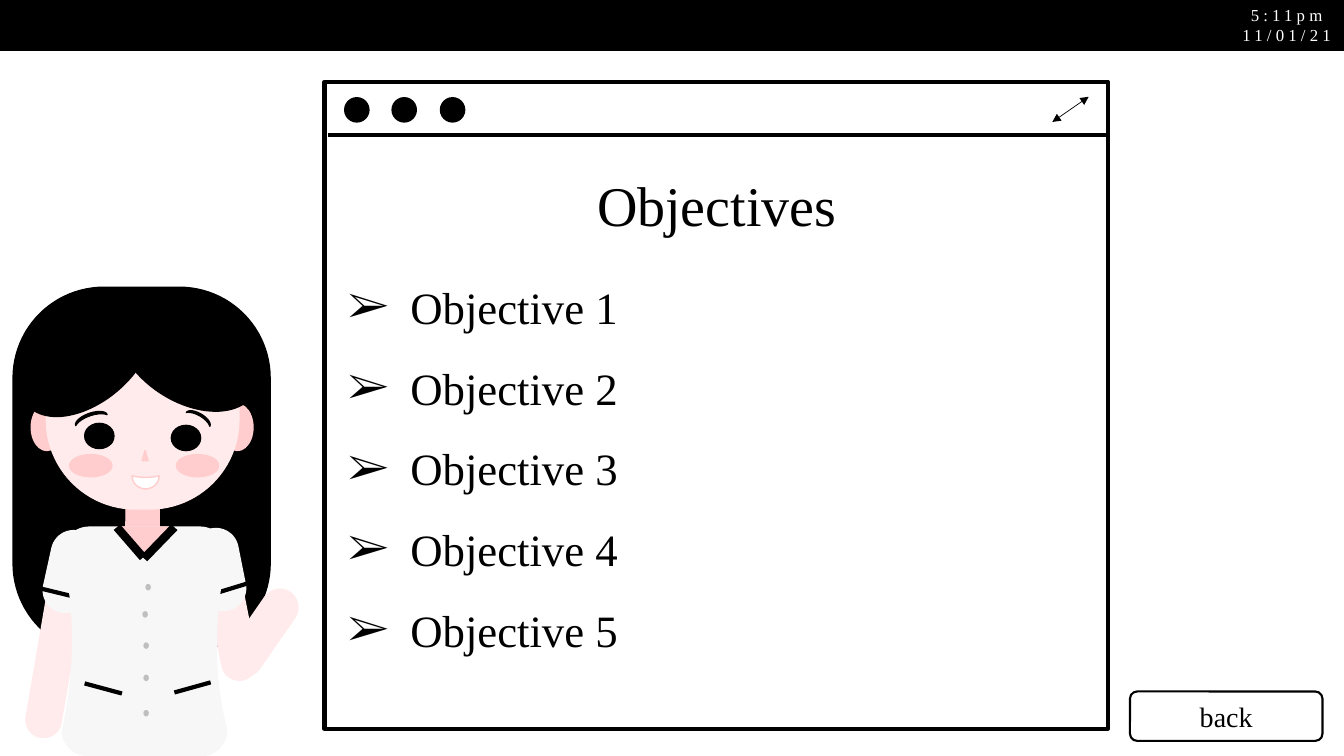
from lxml import etree
from pptx import Presentation
from pptx.dml.color import RGBColor
from pptx.enum import shapes, text
from pptx.oxml import ns
from pptx.util import Cm, Pt

FONT = "Times New Roman"
COLORS = {"black": "000000", "white": "FFFFFF", "blush": "FFCDCD",
          "skin": "FFEBEB", "blouse": "F7F7F7", "button": "BFBFBF"}
KINDS = {"rect": shapes.MSO_SHAPE.RECTANGLE, "round": shapes.MSO_SHAPE.ROUNDED_RECTANGLE,
         "oval": shapes.MSO_SHAPE.OVAL, "moon": shapes.MSO_SHAPE.MOON,
         "triangle": shapes.MSO_SHAPE.ISOSCELES_TRIANGLE}

# Content
CLOCK = ["5:11pm", "11/01/21"]
TITLE = "Objectives"
OBJECTIVES = [f"Objective {number}" for number in range(1, 6)]
BACK = "back"

# Girl, in inches: kind, (left, top, width, height), colour, rotation, adjustment
HAIR_AND_ARMS = [
    ("round", (0.13, 2.85, 2.55, 3.64), "black", 0, 0.353),
    ("oval", (0.31, 4.01, 0.31, 0.46), "blush"),
    ("oval", (2.2, 4.01, 0.31, 0.46), "blush"),
    ("round", (1.25, 4.98, 0.33, 0.41), "blush"),
    ("round", (0.4, 5.29, 0.35, 2.04), "skin", 9.7, 0.5),
    ("round", (0.47, 5.26, 0.44, 0.82), "blouse", 12.4, 0.5),
    ("round", (2.09, 5.29, 0.35, 1.47), "skin", 348.7, 0.5),
    ("round", (1.96, 5.24, 0.44, 0.82), "blouse", 348.7, 0.5),
]
FACE = [
    ("round", (0.46, 2.99, 1.91, 2.06), "skin", 0, 0.463),
    ("oval", (1.36, 2.69, 1.01, 1.57), "black", 303.4),
    ("oval", (0.39, 2.77, 0.93, 1.52), "black", 50.5),
    ("triangle", (1.41, 4.47, 0.06, 0.1), "blush"),
    ("oval", (0.69, 4.51, 0.42, 0.22), "blush"),
    ("oval", (1.75, 4.51, 0.42, 0.22), "blush"),
    ("moon", (0.86, 3.97, 0.07, 0.33), "black", 70.8, 0.343),
    ("moon", (1.95, 4, 0.06, 0.27), "black", 120.4, 0.343),
    ("oval", (0.84, 4.2, 0.29, 0.25), "black"),
    ("moon", (0.96, 4.27, 0.06, 0.26), "black", 270, 0.343),
    ("moon", (1.8, 4.28, 0.06, 0.24), "black", 270, 0.343),
    ("oval", (1.7, 4.22, 0.29, 0.25), "black"),
]
MOUTH = [("oval", (1.38, 4.74, 0.13, 0.11), "white"),
         ("moon", (1.38, 4.65, 0.13, 0.27), "white", 270, 0.875)]
NECKLINE_AND_HAND = [("triangle", (1.16, 5.23, 0.54, 0.3), "blush", 180),
                     ("round", (2.42, 5.79, 0.36, 0.98), "skin", 34.7, 0.5)]
BUTTONS = [(1.45, 5.8), (1.42, 6.07), (1.43, 6.38), (1.43, 6.7), (1.43, 7.05)]

# Lines: start, end, points wide
CUFFS = [((2.09, 5.9), (2.45, 5.79), 3), ((0.41, 5.84), (0.78, 5.93), 3)]
COLLAR_AND_POCKETS = [((1.16, 5.23), (1.42, 5.53), 6), ((1.43, 5.54), (1.73, 5.23), 6),
                      ((1.73, 6.87), (2.09, 6.77), 3), ((0.84, 6.78), (1.21, 6.88), 3)]

# Blouse outline: one point is a straight side, three points are a curve
BLOUSE = [
    [(0.89, 5.23)], [(1.98, 5.23)],
    [(2.13, 5.23), (2.25, 5.35), (2.25, 5.49)],
    [(2.12, 6.08), (2.1, 6.67), (2.25, 7.25)],
    [(2.25, 7.35), (2.18, 7.44), (2.09, 7.48)],
    [(2, 7.5)], [(0.87, 7.5)], [(0.78, 7.48)],
    [(0.69, 7.44), (0.62, 7.35), (0.62, 7.25)],
    [(0.73, 6.77), (0.78, 6.13), (0.62, 5.49)],
    [(0.62, 5.35), (0.74, 5.23), (0.89, 5.23)],
]


def size(inches):
    return Cm(inches * 2.54)


def color(name):
    return RGBColor.from_string(COLORS[name])


def paint(shape, fill, line, width=1):
    shape.shadow.inherit = False
    shape.fill.solid()
    shape.fill.fore_color.rgb = color(fill)
    shape.line.color.rgb = color(line)
    shape.line.width = Pt(width)


def add_shape(parent, kind, place, fill, rotation=0, adjustment=None, line=None, width=1):
    shape = parent.shapes.add_shape(KINDS[kind], *map(size, place))
    paint(shape, fill, line or fill, width)
    shape.rotation = rotation
    if adjustment is not None:
        shape.adjustments[0] = adjustment
    return shape


def add_line(parent, start, end, width):
    line = parent.shapes.add_connector(shapes.MSO_CONNECTOR.STRAIGHT,
                                       *map(size, (*start, *end)))
    line.line.color.rgb = color("black")
    line.line.width = Pt(width)
    etree.SubElement(line._element.spPr, ns.qn("a:effectLst"))
    return line


def add_outline(parent, segments, steps=16):
    points = [segments[0][0]]
    for segment in segments[1:]:
        if len(segment) == 1:
            points += segment
            continue
        corners = [points[-1], *segment]
        for step in range(1, steps + 1):
            t = step / steps
            weights = ((1 - t) ** 3, 3 * t * (1 - t) ** 2, 3 * t * t * (1 - t), t ** 3)
            points.append(tuple(sum(weight * corner[axis]
                                    for weight, corner in zip(weights, corners))
                                for axis in (0, 1)))
    points = [(size(x), size(y)) for x, y in points]
    builder = parent.shapes.build_freeform(*points[0])
    builder.add_line_segments(points[1:], close=True)
    return builder.convert_to_shape()


def write(box, lines, points, name="black", align=text.PP_ALIGN.CENTER):
    frame = box.text_frame
    frame.vertical_anchor = text.MSO_ANCHOR.MIDDLE
    frame.auto_size = text.MSO_AUTO_SIZE.NONE
    frame.word_wrap = True
    for index, words in enumerate(lines):
        para = frame.add_paragraph() if index else frame.paragraphs[0]
        para.alignment = align
        para.space_before = Pt(0)
        span = para.add_run()
        span.text = words
        span.font.name = FONT
        span.font.size = Pt(points)
        span.font.color.rgb = color(name)
    return frame


def place_on_top(box, left, top, width, height):
    box.left, box.top, box.width, box.height = map(size, (left, top, width, height))
    box.element.getparent().append(box.element)


deck = Presentation()
deck.slide_width, deck.slide_height = size(13.333), size(7.5)
page = deck.slides.add_slide(deck.slide_layouts[1])

# Top bar with the clock
add_shape(page, "rect", (0, 0, 13.333, 0.5), "black")
clock = page.shapes.add_textbox(*map(size, (12.2, 0, 1.13, 0.5)))
frame = write(clock, CLOCK, 12, "white")
frame.word_wrap = False
frame.vertical_anchor = text.MSO_ANCHOR.TOP
for para in frame.paragraphs:
    para.runs[0].font._element.set("spc", "300")

# Girl
girl = page.shapes.add_group_shape()
for part in HAIR_AND_ARMS:
    add_shape(girl, *part)
for cuff in CUFFS:
    add_line(girl, *cuff)
for part in FACE:
    add_shape(girl, *part)
for part in MOUTH:
    add_shape(girl, *part, line="blush")
paint(add_outline(girl, BLOUSE), "blouse", "blouse")
for part in NECKLINE_AND_HAND:
    add_shape(girl, *part)
for left, top in BUTTONS:
    add_shape(girl, "oval", (left, top, 0.04, 0.05), "button")
for seam in COLLAR_AND_POCKETS:
    add_line(girl, *seam)

# Window
window = page.shapes.add_group_shape()
add_shape(window, "rect", (3.22, 0.81, 7.77, 6.42), "white", line="black", width=3)
add_line(window, (3.25, 1.34), (10.99, 1.34), 3)
for left in (3.42, 3.89, 4.37):
    add_shape(window, "oval", (left, 0.97, 0.24, 0.24), "black")
resize = add_line(window, (10.8, 0.96), (10.44, 1.21), 0.5)
for end in ("a:headEnd", "a:tailEnd"):
    etree.SubElement(resize.line._get_or_add_ln(), ns.qn(end), type="triangle")

# Title and list
title, body = page.shapes.title, page.placeholders[1]
place_on_top(title, 3.74, 1.51, 6.74, 1.02)
write(title, [TITLE], 40)
place_on_top(body, 3.35, 2.36, 7.53, 4.3)
for para in write(body, OBJECTIVES, 32, align=text.PP_ALIGN.LEFT).paragraphs:
    para.line_spacing = 1.5
    properties = para._p.get_or_add_pPr()
    properties.set("marL", str(size(0.62)))
    properties.set("indent", str(-size(0.62)))
    etree.SubElement(properties, ns.qn("a:buFont"), typeface=FONT)
    etree.SubElement(properties, ns.qn("a:buChar"), char="➢")

# Back button
button = add_shape(page, "round", (11.21, 6.86, 1.91, 0.49), "white", 0, 0.146, "black", 1.5)
write(button, [BACK], 20)

deck.save("out.pptx")
